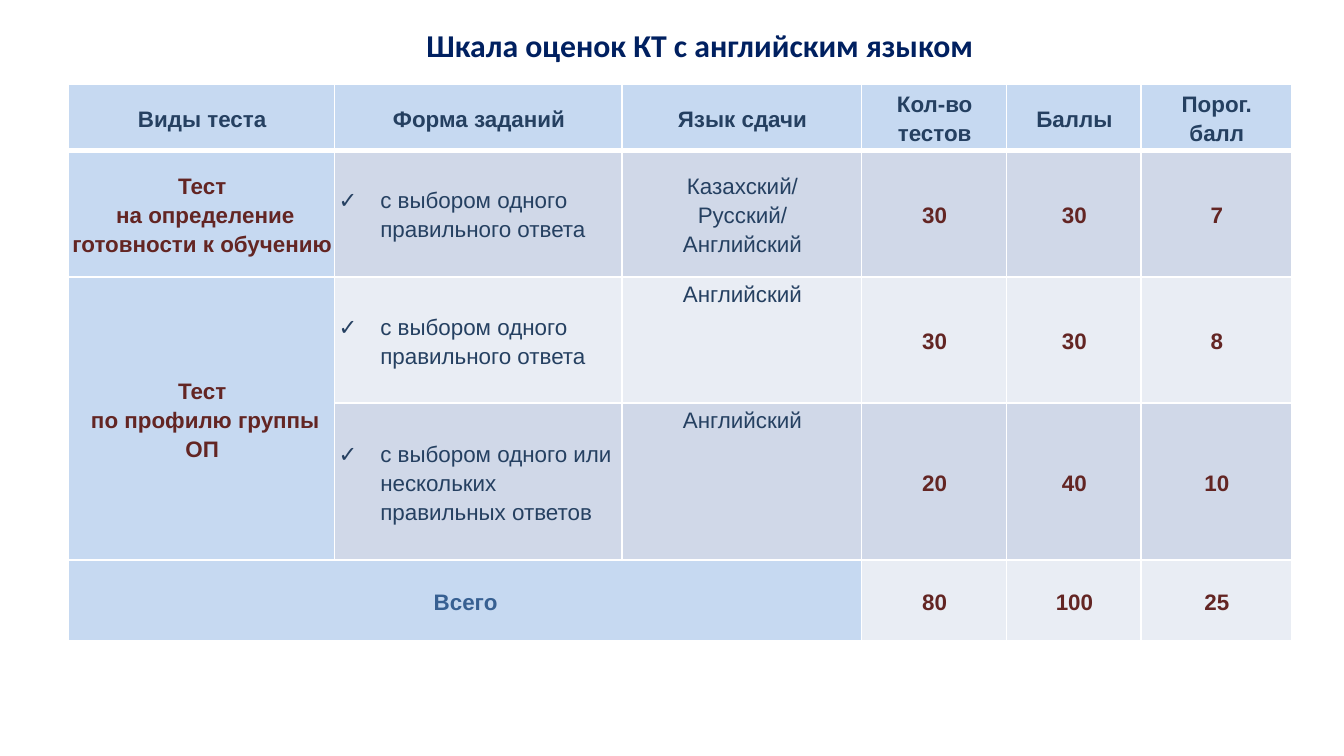
from dataclasses import dataclass

from lxml import etree
from pptx import Presentation
from pptx.dml.color import RGBColor
from pptx.enum import text
from pptx.oxml import ns
from pptx.util import Inches, Pt


@dataclass(frozen=True)
class Theme:
    title: str = "002060"
    body: str = "254061"
    accent: str = "632523"
    total: str = "376092"
    label_fill: str = "C6D9F1"
    dark_band: str = "D0D8E8"
    light_band: str = "E9EDF4"
    border: str = "FFFFFF"
    title_font: str = "Calibri"
    table_font: str = "Arial"
    title_size: float = 17
    table_size: float = 12


THEME = Theme()
COLUMNS = [1.98, 2.14, 1.78, 1.08, 1, 1.12]
ROWS = [0.49, 0.94, 0.94, 1.17, 0.6]
HEADERS = ["Виды теста", "Форма заданий", "Язык сдачи",
           "Кол-во тестов", "Баллы", "Порог.\nбалл"]
ONE_ANSWER = "с выбором одного правильного ответа"
TESTS = [
    ["Тест\n на определение готовности к обучению", ONE_ANSWER,
     "Казахский/\nРусский/\nАнглийский", "30", "30", "7"],
    ["Тест\n по профилю группы ОП", ONE_ANSWER, "Английский", "30", "30", "8"],
    [None, "с выбором одного или нескольких правильных ответов",
     "Английский", "20", "40", "10"],
]
TOTALS = ["Всего", None, None, "80", "100", "25"]


def add_run(p, words, font, size, color, bold):
    r = p.add_run()
    r.text = words
    r.font.name = font
    r.font.size = Pt(size)
    r.font.bold = bold
    r.font.color.rgb = RGBColor.from_string(color)


def indent(p, left, first):
    pPr = p._p.get_or_add_pPr()
    pPr.set("marL", str(Inches(left)))
    pPr.set("indent", str(Inches(first)))
    return pPr


def add_title(s, words):
    box = s.shapes.add_textbox(Inches(1.7), Inches(0.15), Inches(6.7), Inches(0.37))
    tf = box.text_frame
    tf.word_wrap = True
    tf.auto_size = text.MSO_AUTO_SIZE.SHAPE_TO_FIT_TEXT
    tf.margin_left = tf.margin_right = Inches(0.07)
    tf.margin_top = tf.margin_bottom = Inches(0.04)
    p = tf.paragraphs[0]
    p.alignment = text.PP_ALIGN.CENTER
    indent(p, 0, 0.37)
    add_run(p, words, THEME.title_font, THEME.title_size, THEME.title, True)


def set_borders(cell, top=1, bottom=1):
    tcPr = cell._tc.get_or_add_tcPr()
    for side, width in (("L", 1), ("R", 1), ("T", top), ("B", bottom)):
        ln = etree.SubElement(tcPr, ns.qn(f"a:ln{side}"), w=str(Pt(width)))
        fill = etree.SubElement(ln, ns.qn("a:solidFill"))
        etree.SubElement(fill, ns.qn("a:srgbClr"), val=THEME.border)


def fill_cell(cell, words, fill, color, bold=True, checked=False, top=False):
    cell.fill.solid()
    cell.fill.fore_color.rgb = RGBColor.from_string(fill)
    cell.margin_left = cell.margin_right = Inches(0.01)
    cell.margin_top = cell.margin_bottom = Inches(0.01)
    cell.vertical_anchor = text.MSO_ANCHOR.TOP if top else text.MSO_ANCHOR.MIDDLE
    tf = cell.text_frame
    for i, line in enumerate(words.split("\n")):
        p = tf.add_paragraph() if i else tf.paragraphs[0]
        p.line_spacing = 1.15
        if checked:
            pPr = indent(p, 0.33, -0.31)
            etree.SubElement(pPr, ns.qn("a:buFont"), typeface=THEME.table_font)
            etree.SubElement(pPr, ns.qn("a:buChar"), char="✓")
        else:
            p.alignment = text.PP_ALIGN.CENTER
            indent(p, 0.01, 0)
        add_run(p, line, THEME.table_font, THEME.table_size, color, bold)


def add_scores(s):
    frame = s.shapes.add_table(len(ROWS), len(COLUMNS), Inches(0.51), Inches(0.63),
                               Inches(sum(COLUMNS)), Inches(sum(ROWS)))
    table = frame.table
    for column, width in zip(table.columns, COLUMNS):
        column.width = Inches(width)
    for row, height in zip(table.rows, ROWS):
        row.height = Inches(height)
    for r in range(len(ROWS)):
        for c in range(len(COLUMNS)):
            set_borders(table.cell(r, c), 3 if r == 1 else 1, 3 if r == 0 else 1)
    table.cell(2, 0).merge(table.cell(3, 0))
    table.cell(4, 0).merge(table.cell(4, 2))

    for c, words in enumerate(HEADERS):
        fill_cell(table.cell(0, c), words, THEME.label_fill, THEME.body)
    for r, values in enumerate(TESTS + [TOTALS], 1):
        band = THEME.dark_band if r % 2 else THEME.light_band
        for c, words in enumerate(values):
            if words is None:
                continue
            cell = table.cell(r, c)
            if c == 0:
                color = THEME.total if values is TOTALS else THEME.accent
                fill_cell(cell, words, THEME.label_fill, color)
            elif c < 3:
                fill_cell(cell, words, band, THEME.body, bold=False,
                          checked=c == 1, top=c == 2 and r > 1)
            else:
                fill_cell(cell, words, band, THEME.accent)


def main():
    prs = Presentation()
    prs.slide_width = Inches(10)
    prs.slide_height = prs.slide_width * 9 // 16
    s = prs.slides.add_slide(prs.slide_layouts[6])
    add_title(s, "Шкала оценок КТ с английским языком ")
    add_scores(s)
    prs.save("out.pptx")


if __name__ == "__main__":
    main()
